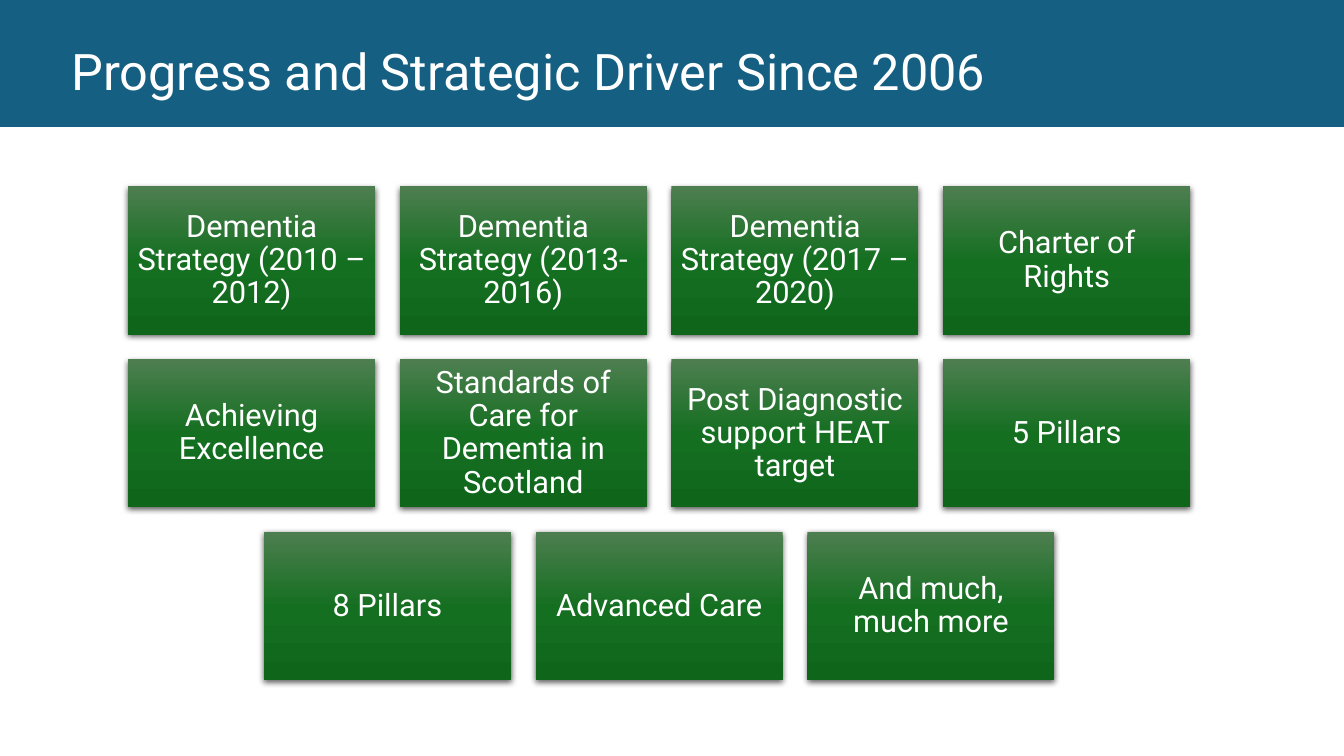
from copy import deepcopy
from dataclasses import dataclass

from lxml import etree
from pptx import Presentation
from pptx.dml.color import RGBColor
from pptx.enum.shapes import MSO_SHAPE
from pptx.enum.text import MSO_ANCHOR, MSO_AUTO_SIZE, PP_ALIGN
from pptx.oxml.ns import qn
from pptx.util import Inches, Pt

RECT = MSO_SHAPE.RECTANGLE
MIDDLE = MSO_ANCHOR.MIDDLE
NO_FIT = MSO_AUTO_SIZE.NONE
LEFT, CENTER = PP_ALIGN.LEFT, PP_ALIGN.CENTER

SLIDE_W, SLIDE_H = 13.33, 7.5
TITLE_ONLY = 5
FONT = "Roboto"
WHITE, BLUE = "FFFFFF", "156082"
GREENS = ((0, "4D7E50"), (0.5, "156F21"), (1, "0F661B"))

GRID_X, GRID_Y = 1.27, 1.85
CARD_W, CARD_H = 2.45, 1.47
GAP = CARD_W / 10
COLUMNS = 4

ROWS = (
    ("Dementia Strategy (2010 – 2012)", "Dementia Strategy (2013-2016)",
     "Dementia Strategy (2017 – 2020)", "Charter of Rights"),
    ("Achieving Excellence", "Standards of Care for Dementia in Scotland",
     "Post Diagnostic support HEAT target", "5 Pillars"),
    ("8 Pillars", "Advanced Care", "And much, much more"),
)


@dataclass(frozen=True)
class Card:
    text: str
    col: float
    row: int


def rgb(color: str) -> RGBColor:
    return RGBColor.from_string(color)


def apply(obj, values: dict) -> None:
    for name, value in values.items():
        setattr(obj, name, value)


def place(sp, x: float, y: float, w: float, h: float) -> None:
    apply(sp, {"left": Inches(x), "top": Inches(y),
               "width": Inches(w), "height": Inches(h)})


def write(sp, text: str, size: float, align, inset: float) -> None:
    tf = sp.text_frame
    margins = dict.fromkeys(
        ("margin_left", "margin_top", "margin_right", "margin_bottom"), Inches(inset))
    apply(tf, {"word_wrap": True, "auto_size": NO_FIT,
               "vertical_anchor": MIDDLE, **margins})
    p = tf.paragraphs[0]
    apply(p, {"alignment": align, "line_spacing": 0.9})
    r = p.add_run()
    r.text = text
    apply(r.font, {"name": FONT, "size": Pt(size)})
    r.font.color.rgb = rgb(WHITE)


def add_rect(s, x: float, y: float, w: float, h: float):
    sp = s.shapes.add_shape(RECT, Inches(x), Inches(y), Inches(w), Inches(h))
    sp.line.fill.background()
    sp.shadow.inherit = False
    return sp


def fill_gradient(sp) -> None:
    sp.fill.gradient()
    sp.fill.gradient_angle = 270
    stops = sp._element.spPr.find(".//" + qn("a:gsLst"))
    stops.append(deepcopy(stops[-1]))
    for stop, (position, color) in zip(sp.fill.gradient_stops, GREENS):
        stop.position = position
        stop.color.rgb = rgb(color)


def add_shadow(sp) -> None:
    effects = sp._element.spPr.find(qn("a:effectLst"))
    shadow = etree.SubElement(effects, qn("a:outerShdw"), {
        "blurRad": str(Pt(4.5)), "dist": str(Pt(1.5)),
        "dir": "5400000", "algn": "ctr", "rotWithShape": "0"})
    color = etree.SubElement(shadow, qn("a:srgbClr"), val="000000")
    etree.SubElement(color, qn("a:alpha"), val="63000")


def add_header(s, text: str) -> None:
    band = add_rect(s, 0, 0, SLIDE_W, 1.26)
    band.fill.solid()
    band.fill.fore_color.rgb = rgb(BLUE)
    title = s.shapes.title
    title._element.addprevious(band._element)
    place(title, 0.71, 0.46, 11.96, 0.55)
    write(title, text, 36, LEFT, 0)


def add_card(s, card: Card) -> None:
    x = GRID_X + card.col * (CARD_W + GAP)
    y = GRID_Y + card.row * (CARD_H + GAP)
    sp = add_rect(s, x, y, CARD_W, CARD_H)
    fill_gradient(sp)
    add_shadow(sp)
    write(sp, card.text, 22, CENTER, 0.09)


def main() -> None:
    prs = Presentation()
    apply(prs, {"slide_width": Inches(SLIDE_W), "slide_height": Inches(SLIDE_H)})
    s = prs.slides.add_slide(prs.slide_layouts[TITLE_ONLY])
    add_header(s, "Progress and Strategic Driver Since 2006")
    for row, texts in enumerate(ROWS):
        indent = (COLUMNS - len(texts)) / 2
        for col, text in enumerate(texts):
            add_card(s, Card(text, col + indent, row))
    prs.save("out.pptx")


if __name__ == "__main__":
    main()
